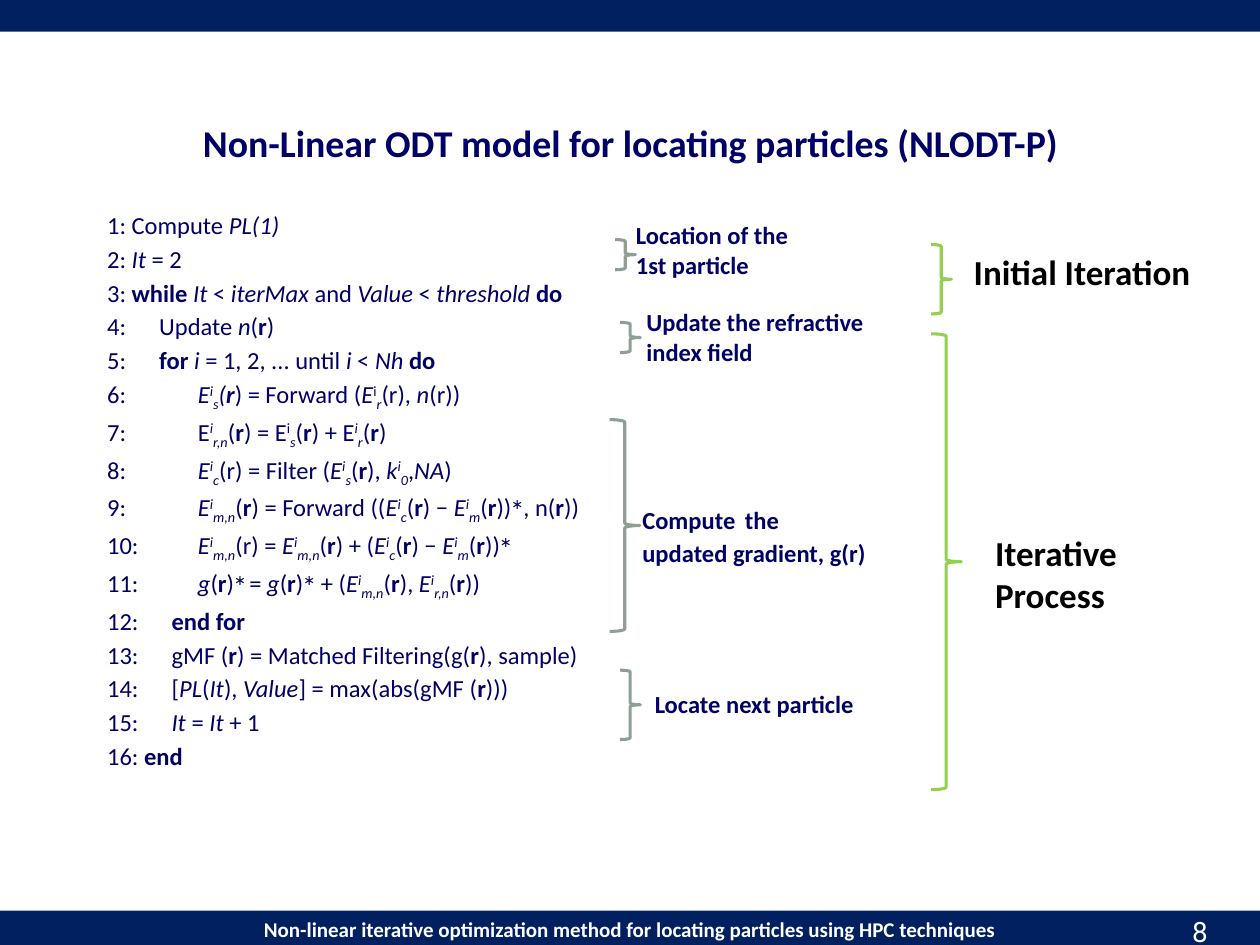
import pptx
import pptx.dml.color
import pptx.enum.shapes
import pptx.enum.text
import pptx.util
from lxml import etree
from pptx.oxml.ns import qn
from pptx.util import Cm, Pt

COLORS = {
    "bar": "002060",
    "text": "000066",
    "white": "FFFFFF",
    "black": "000000",
    "step": "8F9F96",
    "phase": "92D050",
}

MARKS = {"~": "italic", "#": "bold", "^": "super", "_": "sub"}
BASELINES = {"super": "30000", "sub": "-25000"}

LOOP, AFTER_LOOP, BODY = 1.05, 1.3, 1.83
ALGORITHM = [
    (0, "Compute ~PL(1)~"),
    (0, "~It ~= 2"),
    (0, "#while #~It~ < ~iterMax~ and ~Value~ < ~threshold ~#do#"),
    (LOOP, "Update ~n~(#r#)"),
    (LOOP, "#for#~ i ~= 1, 2, ... until ~i~ < ~Nh ~#do#"),
    (BODY, "~E^i^_s_(#r#~) = Forward (~E~^i^~_r_~(r), ~n~(r))"),
    (BODY, "E~^i^_r,n_~(#r#) = E^i^~_s_~(#r#) + E~^i^_r_~(#r#)"),
    (BODY, "~E^i^_c_~(r) = Filter (~E^i^_s_~(#r#), ~k^i^_0_~,~NA~)"),
    (BODY, "~E^i^_m,n_~(#r#) = Forward ((~E^i^_c_~(#r#) − ~E^i^_m_~(#r#))^∗^, n(#r#))"),
    (BODY, "~E^i^_m,n_~(r) = ~E^i^_m,n_~(#r#) + (~E^i^_c_~(#r#) − ~E^i^_m_~(#r#))^∗^"),
    (BODY, "~g~(#r#)^∗ ^= ~g~(#r#)^∗^ + (~E^i^_m,n_~(#r#), ~E^i^_r,n_~(#r#))"),
    (AFTER_LOOP, "#end for#"),
    (AFTER_LOOP, "gMF (#r#) = Matched Filtering(g(#r#), sample)"),
    (AFTER_LOOP, "[~PL~(~It~), ~Value~] = max(abs(gMF (#r#)))"),
    (AFTER_LOOP, "~It~ = ~It~ + 1"),
    (0, "#end#"),
]

ANNOTATIONS = [
    ("step", (12.4, 4.83, 0.41, 0.61), (0.17, -0.51, 3.81, 1.45),
     ["Location of the", "1st particle"]),
    ("step", (12.5, 6.5, 0.41, 0.61), (0.28, -0.43, 5.03, 1.45),
     ["Update the refractive", "index field"]),
    ("step", (12.29, 8.46, 0.61, 4.27), (0.41, 1.24, 5.26, 1.63),
     ["Compute| |the", "updated gradient, g(r)"]),
    ("step", (12.5, 13.51, 0.41, 1.4), (0.45, 0.26, 4.65, 0.86),
     ["Locate next particle"]),
    ("phase", (18.77, 4.93, 0.41, 1.4), (0.61, 0, 5.03, 1.12),
     ["Initial Iteration"]),
    ("phase", (18.77, 6.73, 0.61, 9.19), (1.04, 3.86, 3.68, 1.96),
     ["Iterative", "Process"]),
]
LABEL_STYLES = {"step": (14, "text"), "phase": (20, "black")}


def rgb(name):
    return pptx.dml.color.RGBColor.from_string(COLORS[name])


def set_font(para, size, color, bold=False, name="Calibri"):
    para.font.name = name
    para.font.size = Pt(size)
    para.font.bold = bold
    para.font.color.rgb = rgb(color)


def add_text_frame(page, box):
    frame = page.shapes.add_textbox(*map(Cm, box)).text_frame
    frame.word_wrap = True
    return frame


def add_centered_line(frame, text, size, color, bold=True, name="Calibri"):
    para = frame.paragraphs[0]
    para.text = text
    para.alignment = pptx.enum.text.PP_ALIGN.CENTER
    set_font(para, size, color, bold, name)


def add_tab_stop(para, position):
    tabs = etree.SubElement(para._p.get_or_add_pPr(), qn("a:tabLst"))
    etree.SubElement(tabs, qn("a:tab"), pos=str(Cm(position)), algn="l")


def add_marked_text(para, marked):
    active, text = set(), ""
    for letter in marked + "~":
        if letter not in MARKS:
            text += letter
            continue
        if text:
            span = para.add_run()
            span.text = text
            if "bold" in active:
                span.font.bold = True
            if "italic" in active:
                span.font.italic = True
            for shift in active & BASELINES.keys():
                span._r.get_or_add_rPr().set("baseline", BASELINES[shift])
            text = ""
        active ^= {MARKS[letter]}


def add_bar(page, box):
    bar = page.shapes.add_shape(pptx.enum.shapes.MSO_SHAPE.RECTANGLE, *map(Cm, box))
    bar.shadow.inherit = False
    bar.fill.solid()
    bar.fill.fore_color.rgb = rgb("bar")
    bar.line.fill.background()
    return bar


def add_footer(page, box, text, number):
    left, top, width, height = box
    add_centered_line(add_bar(page, box).text_frame, text, 12, "white")
    frame = add_text_frame(page, (left + width - 2.11, top - 0.05, 1.8, height + 0.05))
    add_centered_line(frame, number, 16, "white", False, "Roboto")


def add_title(page, box, text):
    frame = add_text_frame(page, box)
    frame.vertical_anchor = pptx.enum.text.MSO_ANCHOR.MIDDLE
    add_centered_line(frame, text, 21.6, "text")


def add_algorithm(page, box):
    frame = add_text_frame(page, box)
    for number, (indent, line) in enumerate(ALGORITHM, 1):
        para = frame.paragraphs[0] if number == 1 else frame.add_paragraph()
        if indent:
            add_tab_stop(para, indent)
        if number > 1:
            para.space_before = Pt(2.5)
        set_font(para, 14, "text")
        gap = "\t" if indent else " "
        add_marked_text(para, f"{number}:{gap}{line}")


def add_annotation(page, box, kind, offset, lines):
    brace = page.shapes.add_shape(pptx.enum.shapes.MSO_SHAPE.RIGHT_BRACE, *map(Cm, box))
    brace.shadow.inherit = False
    brace.fill.background()
    brace.line.color.rgb = rgb(kind)
    brace.line.width = Pt(1.75)

    shift_x, shift_y, width, height = offset
    frame = add_text_frame(page, (box[0] + shift_x, box[1] + shift_y, width, height))
    size, color = LABEL_STYLES[kind]
    for index, line in enumerate(lines):
        para = frame.add_paragraph() if index else frame.paragraphs[0]
        set_font(para, size, color, True)
        for piece in line.split("|"):
            span = para.add_run()
            span.text = piece
            if piece == " ":
                span.font.size = Pt(24)
                span.font.bold = False


def main():
    deck = pptx.Presentation()
    deck.slide_width, deck.slide_height = Cm(25.4), Cm(19.05)
    page = deck.slides.add_slide(deck.slide_layouts[6])
    add_bar(page, (0, 0, 25.4, 0.64))
    add_footer(page, (0, 18.36, 25.4, 0.76),
               "Non-linear iterative optimization method for locating particles using HPC techniques", "8")
    add_title(page, (2.11, 2.34, 21.21, 1.07),
              "Non-Linear ODT model for locating particles (NLODT-P)")
    add_algorithm(page, (1.91, 4.11, 21.59, 12.8))
    for kind, box, offset, lines in ANNOTATIONS:
        add_annotation(page, box, kind, offset, lines)
    deck.save("out.pptx")


if __name__ == "__main__":
    main()
